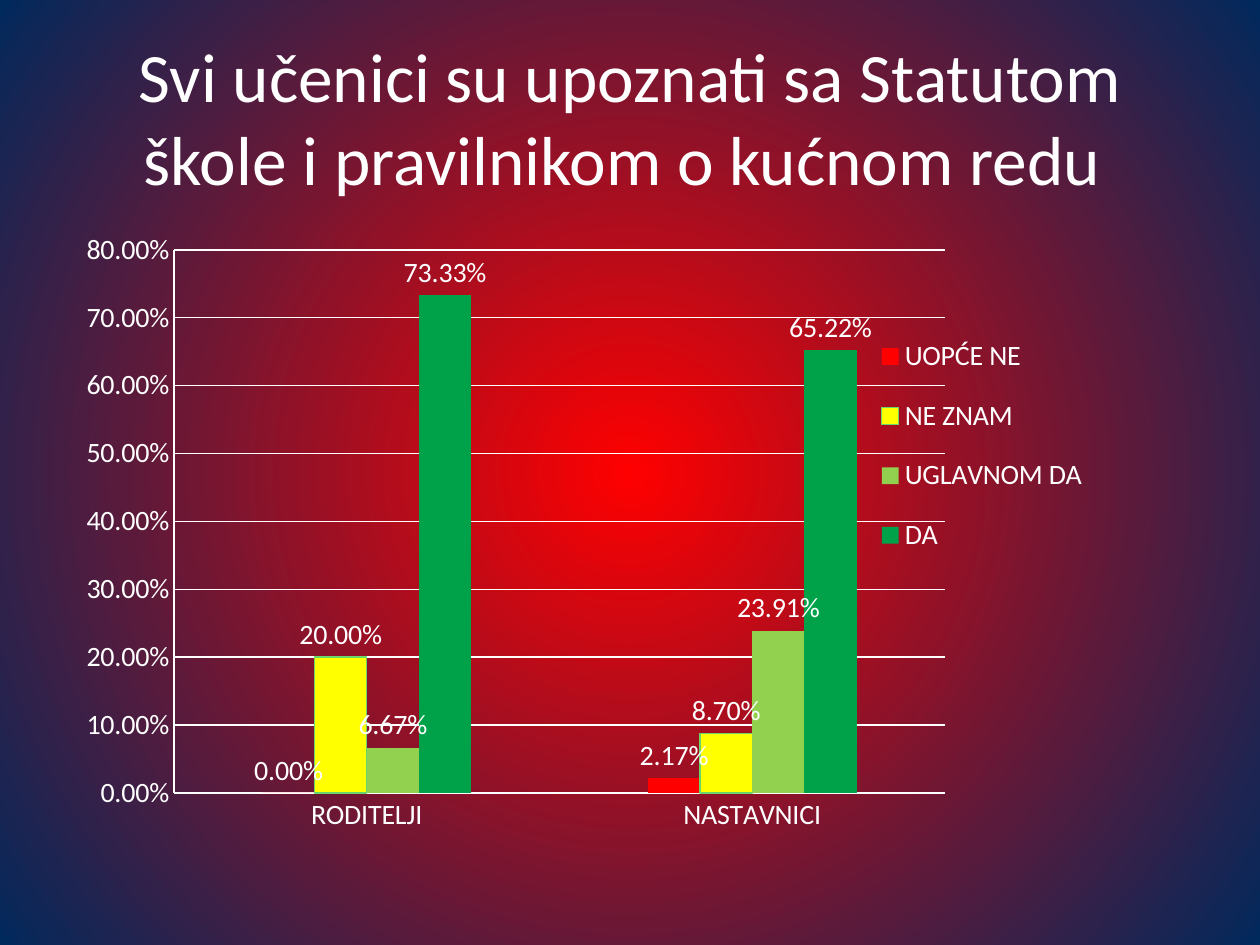
"""Build a survey slide with a clustered column chart on a radial gradient."""
from dataclasses import dataclass

from lxml import etree
from pptx import Presentation
from pptx import util as u
from pptx.chart.data import CategoryChartData
from pptx.dml.color import RGBColor
from pptx.enum import chart as charts, text
from pptx.oxml import parse_xml
from pptx.oxml.ns import nsdecls, qn

TITLE = "Svi učenici su upoznati sa Statutom škole i pravilnikom o kućnom redu "
CATEGORIES = ["RODITELJI", "NASTAVNICI"]
SERIES = [
    ("UOPĆE NE", (0, 0.0217), "FF0000"),
    ("NE ZNAM", (0.2, 0.087), "FFFF00"),
    ("UGLAVNOM DA", (0.0667, 0.2391), "92D050"),
    ("DA", (0.7333, 0.6522), "00A249"),
]
OUTLINED, OUTLINE_WIDTH = "NE ZNAM", 0.75
PERCENT = "0.00%"

PX = u.Inches(1) // 126
SLIDE_BOX = (0, 0, 1260, 945)
TITLE_BOX = (63, 38, 1134, 157)
CHART_BOX = (63, 220, 1134, 624)
PLOT_BOX = (174, 250, 771, 543)
LEGEND_BOX = (872, 314, 220, 264)


@dataclass(frozen=True)
class Theme:
    font: str = "Calibri"
    ink: str = "FFFFFF"
    centre: str = "FF0000"
    edge: str = "00295C"
    outline: str = "68D66B"
    title_size: float = 39.6
    chart_size: int = 16


THEME = Theme()


def rgb(value):
    return RGBColor.from_string(value)


def style_font(font, size):
    font.name = THEME.font
    font.size = u.Pt(size)
    font.color.rgb = rgb(THEME.ink)


def paint_background(slide):
    fill = slide.background.fill
    fill.gradient()
    for stop, color in zip(fill.gradient_stops, (THEME.centre, THEME.edge)):
        stop.color.rgb = rgb(color)
    linear = next(slide.element.iter(qn("a:lin")))
    radial = parse_xml(
        f'<a:path {nsdecls("a")} path="circle">'
        '<a:fillToRect l="50000" t="50000" r="50000" b="50000"/></a:path>'
    )
    linear.getparent().replace(linear, radial)


def add_title(slide):
    title = slide.shapes.title
    title.left, title.top, title.width, title.height = (v * PX for v in TITLE_BOX)
    frame = title.text_frame
    frame.text = TITLE
    frame.word_wrap = True
    frame.auto_size = text.MSO_AUTO_SIZE.NONE
    frame.vertical_anchor = text.MSO_ANCHOR.MIDDLE
    paragraph = frame.paragraphs[0]
    paragraph.alignment = text.PP_ALIGN.CENTER
    style_font(paragraph.runs[0].font, THEME.title_size)


def place_in_chart(element, box, index, target=None):
    for old in element.findall(qn("c:layout")):
        element.remove(old)
    left, top, width, height = CHART_BOX
    values = {
        "x": (box[0] - left) / width,
        "y": (box[1] - top) / height,
        "w": box[2] / width,
        "h": box[3] / height,
    }
    layout = parse_xml(f'<c:layout {nsdecls("c")}><c:manualLayout/></c:layout>')
    settings = [("layoutTarget", target)] if target else []
    settings += [("xMode", "edge"), ("yMode", "edge")]
    settings += [(name, f"{value:.4f}") for name, value in values.items()]
    for name, value in settings:
        etree.SubElement(layout[0], qn(f"c:{name}")).set("val", value)
    element.insert(index, layout)


def style_axis(axis):
    axis.major_tick_mark = axis.minor_tick_mark = charts.XL_TICK_MARK.NONE
    style_font(axis.tick_labels.font, THEME.chart_size)
    axis.format.line.color.rgb = rgb(THEME.ink)
    axis.format.line.width = u.Pt(0.75)


def style_series(series, color):
    series.invert_if_negative = False
    series.format.fill.solid()
    series.format.fill.fore_color.rgb = rgb(color)
    line = series.format.line
    if series.name == OUTLINED:
        line.color.rgb = rgb(THEME.outline)
        line.width = u.Pt(OUTLINE_WIDTH)
    else:
        line.fill.background()
    labels = series.data_labels
    labels.show_value = True
    labels.number_format = PERCENT
    labels.number_format_is_linked = False
    labels.position = charts.XL_LABEL_POSITION.OUTSIDE_END
    style_font(labels.font, THEME.chart_size)


def add_survey_chart(slide):
    data = CategoryChartData(number_format=PERCENT)
    data.categories = CATEGORIES
    for name, values, _ in SERIES:
        data.add_series(name, values)
    chart = slide.shapes.add_chart(
        charts.XL_CHART_TYPE.COLUMN_CLUSTERED, *(v * PX for v in CHART_BOX), data
    ).chart
    chart.has_title = False
    style_font(chart.font, THEME.chart_size)
    plot = chart.plots[0]
    plot.gap_width, plot.overlap = 339, 0
    plot.vary_by_categories = False
    for series, (_, _, color) in zip(plot.series, SERIES):
        style_series(series, color)

    style_axis(chart.category_axis)
    value_axis = chart.value_axis
    style_axis(value_axis)
    value_axis.minimum_scale, value_axis.maximum_scale = 0, 0.8
    value_axis.major_unit = 0.1
    value_axis.has_major_gridlines = True
    gridline = value_axis.major_gridlines.format.line
    gridline.color.rgb = rgb(THEME.ink)
    gridline.width = u.Pt(0.75)
    value_axis.tick_labels.number_format = PERCENT
    value_axis.tick_labels.number_format_is_linked = False

    chart.has_legend = True
    legend = chart.legend
    legend.position = charts.XL_LEGEND_POSITION.RIGHT
    legend.include_in_layout = False
    style_font(legend.font, THEME.chart_size)
    chart_root = chart.element
    place_in_chart(next(chart_root.iter(qn("c:plotArea"))), PLOT_BOX, 0, "inner")
    place_in_chart(next(chart_root.iter(qn("c:legend"))), LEGEND_BOX, 1)


def main():
    presentation = Presentation()
    presentation.slide_width, presentation.slide_height = (v * PX for v in SLIDE_BOX[2:])
    slide = presentation.slides.add_slide(presentation.slide_layouts[5])
    paint_background(slide)
    add_title(slide)
    add_survey_chart(slide)
    presentation.save("out.pptx")


if __name__ == "__main__":
    main()
